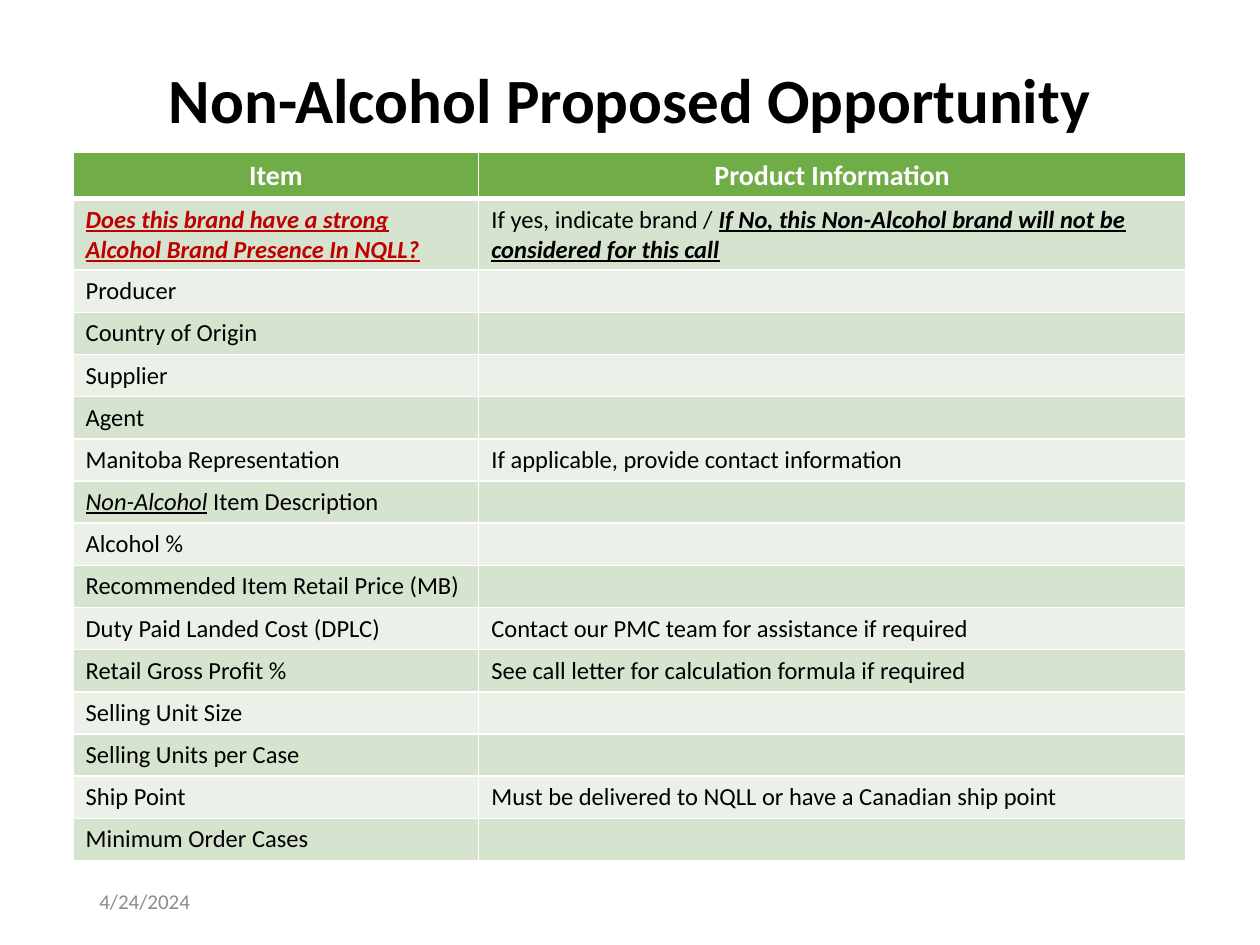
import pptx
import pptx.util
import pptx.dml.color
import pptx.enum.text
import pptx.oxml
import pptx.oxml.ns

Inches = pptx.util.Inches
ALIGN = pptx.enum.text.PP_ALIGN
MIDDLE = pptx.enum.text.MSO_ANCHOR.MIDDLE
TOP = pptx.enum.text.MSO_ANCHOR.TOP

GREEN, DARK, LIGHT = "70AD47", "D5E3CF", "EBF1E9"
STRONG = dict(bold=True, italic=True, underline=True)

# Each cell is a list of (text, format) runs.
ROWS = [
    ([("Does this brand have a strong Alcohol Brand Presence In NQLL?",
       dict(STRONG, color="C00000"))],
     [("If yes, indicate brand / ", {}),
      ("If No, this Non-Alcohol brand will not be considered for this call",
       STRONG)]),
    ([("Producer", {})], []),
    ([("Country of Origin", {})], []),
    ([("Supplier", {})], []),
    ([("Agent", {})], []),
    ([("Manitoba Representation", {})],
     [("If applicable, provide contact information", {})]),
    ([("Non-Alcohol", dict(italic=True, underline=True)),
      (" Item Description", {})], []),
    ([("Alcohol %", {})], []),
    ([("Recommended Item Retail Price (MB)", {})], []),
    ([("Duty Paid Landed Cost (DPLC)", {})],
     [("Contact our PMC team for assistance if required", {})]),
    ([("Retail Gross Profit %", {})],
     [("See call letter for calculation formula if required", {})]),
    ([("Selling Unit Size", {})], []),
    ([("Selling Units per Case", {})], []),
    ([("Ship Point", {})],
     [("Must be delivered to NQLL or have a Canadian ship point", {})]),
    ([("Minimum Order Cases", {})], []),
]


def rgb(code):
    return pptx.dml.color.RGBColor.from_string(code)


def write(para, text, size=14, color="000000", bold=False, italic=False,
          underline=False, align=ALIGN.LEFT):
    """Add one formatted run to a paragraph."""
    para.alignment = align
    run = para.add_run()
    run.text = text
    font = run.font
    font.name, font.size = "Calibri", pptx.util.Pt(size)
    font.bold, font.italic, font.underline = bold, italic, underline
    font.color.rgb = rgb(color)


def border(cell, foot):
    """Draw white cell edges, the lower one foot points wide."""
    props = cell._tc.get_or_add_tcPr()
    for side, width in (("L", 1), ("R", 1), ("T", 1), ("B", foot)):
        props.append(pptx.oxml.parse_xml(
            f'<a:ln{side} {pptx.oxml.ns.nsdecls("a")} '
            f'w="{pptx.util.Pt(width)}"><a:solidFill>'
            f'<a:srgbClr val="FFFFFF"/></a:solidFill></a:ln{side}>'))


def fill_cell(cell, runs, color, foot=1, anchor=MIDDLE):
    border(cell, foot)
    cell.fill.solid()
    cell.fill.fore_color.rgb = rgb(color)
    cell.vertical_anchor = anchor
    para = cell.text_frame.paragraphs[0]
    for text, style in runs:
        write(para, text, **style)
    if not runs:
        # An empty cell must not grow beyond the 14 pt rows.
        para._p.get_or_add_endParaRPr().set("sz", "1400")


def add_title(slide, left, top, width, height):
    title = slide.shapes.title
    title.left, title.top, title.width, title.height = left, top, width, height
    frame = title.text_frame
    frame.word_wrap = True
    frame.vertical_anchor = MIDDLE
    para = frame.paragraphs[0]
    para.line_spacing = 0.9
    write(para, "Non-Alcohol Proposed Opportunity", size=36, bold=True,
          align=ALIGN.CENTER)


def add_date(slide, left, top, width, height):
    frame = slide.shapes.add_textbox(left, top, width, height).text_frame
    frame.word_wrap = True
    frame.vertical_anchor = MIDDLE
    write(frame.paragraphs[0], "4/24/2024", size=12, color="8C8C8C")


def add_form(slide, left, top, width, height):
    """Place the item table, with equal rows below the two top ones."""
    table = slide.shapes.add_table(
        len(ROWS) + 1, 2, left, top, width, height).table
    first = Inches(3.22)
    table.columns[0].width, table.columns[1].width = first, width - first
    tops = [Inches(0.35), Inches(0.56)]
    each = (height - sum(tops)) // (len(ROWS) - 1)
    for row, size in zip(table.rows, tops + [each] * (len(ROWS) - 1)):
        row.height = size
    head = dict(size=16, color="FFFFFF", bold=True, align=ALIGN.CENTER)
    for col, name in enumerate(("Item", "Product Information")):
        fill_cell(table.cell(0, col), [(name, head)], GREEN, 3, TOP)
    for index, cells in enumerate(ROWS, 1):
        for col, runs in enumerate(cells):
            fill_cell(table.cell(index, col), runs,
                      DARK if index % 2 else LIGHT)


def main():
    deck = pptx.Presentation()
    deck.slide_width, deck.slide_height = Inches(10), Inches(7.5)
    slide = deck.slides.add_slide(deck.slide_layouts[5])
    add_title(slide, Inches(0.69), Inches(0.4), Inches(8.62), Inches(0.84))
    add_date(slide, Inches(0.69), Inches(6.95), Inches(2.25), Inches(0.4))
    add_form(slide, Inches(0.58), Inches(1.21), Inches(8.83), Inches(5.6))
    deck.save("out.pptx")


if __name__ == "__main__":
    main()
